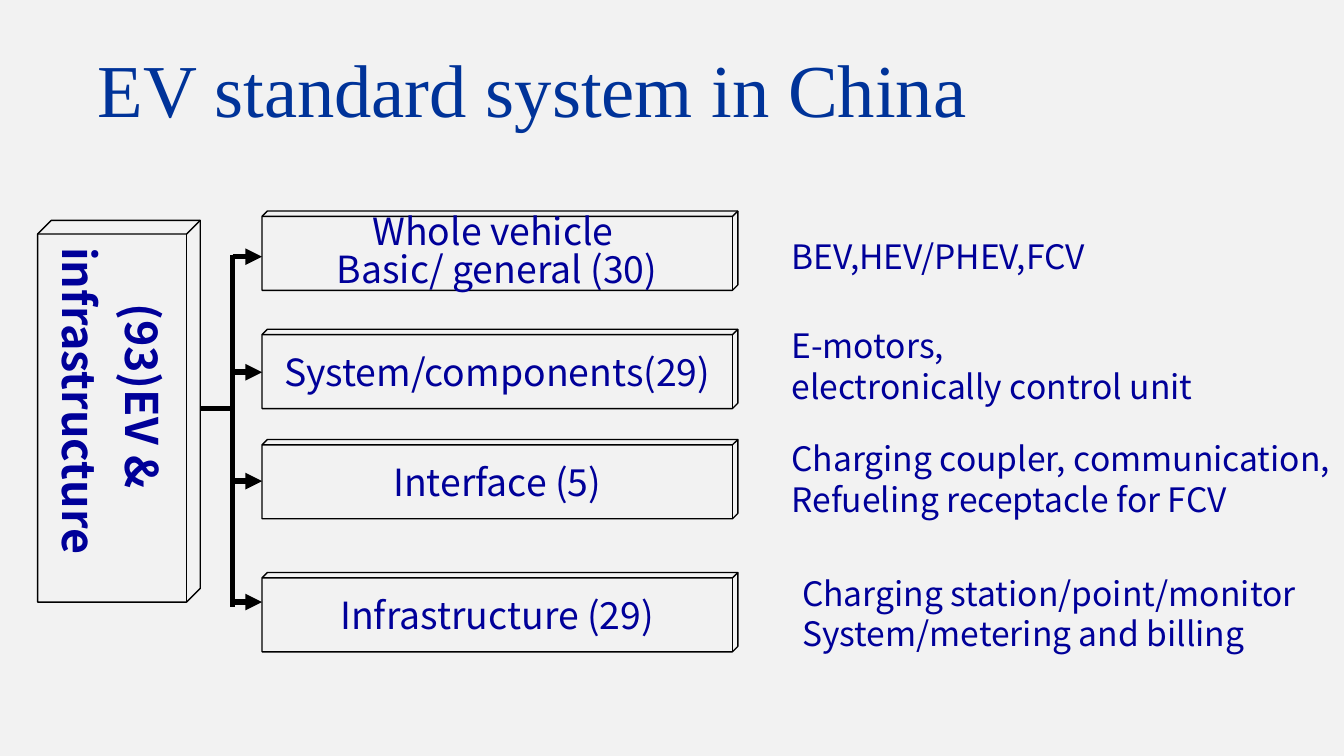
"""Build a slide showing the EV standard system in China as a tree of cubes."""
import pptx
import pptx.dml.color
import pptx.enum.shapes
import pptx.enum.text
import pptx.oxml
import pptx.util
from pptx.util import Inches

ALIGN = pptx.enum.text.PP_ALIGN
NAVY = "000099"
SANS = "Noto Sans CJK SC"


def color(value):
    return pptx.dml.color.RGBColor.from_string(value)


def write(box, lines, size, font=SANS, ink=NAVY, align=ALIGN.LEFT, bold=False, leading=None, gap=0):
    for index, line in enumerate(lines):
        frame = box.text_frame
        para = frame.add_paragraph() if index else frame.paragraphs[0]
        para.alignment = align
        if leading:
            para.line_spacing = pptx.util.Pt(leading)
        if index and gap:
            para.space_before = pptx.util.Pt(gap)
        span = para.add_run()
        span.text = line
        span.font.size = pptx.util.Pt(size)
        span.font.name = font
        span.font.bold = bold
        span.font.color.rgb = color(ink)


deck = pptx.Presentation()
deck.slide_width, deck.slide_height = Inches(10), Inches(10 * 9 / 16)
page = deck.slides.add_slide(deck.slide_layouts[6])
page.background.fill.solid()
page.background.fill.fore_color.rgb = color("F2F2F2")

root = ["(93)EV & ", "infrastructure"]
cubes = [(0.28, 1.64, 1.21, 2.84, 0.084, True, root,
          dict(size=24, align=ALIGN.CENTER, bold=True, gap=5))]

branches = [
    (1.57, ["Whole vehicle ", "Basic/ general (30)"], 20),
    (2.45, ["System/components(29)"], None),
    (3.27, ["Interface (5)"], None),
    (4.26, ["Infrastructure (29)"], None),
]
for top, lines, leading in branches:
    cubes.append((1.95, top, 3.54, 0.59, 0.068, True, lines,
                  dict(size=20, align=ALIGN.CENTER, leading=leading)))

details = [
    (5.79, 1.49, 0.78, ["BEV,HEV/PHEV,FCV"]),
    (5.79, 2.31, 0.77, ["E-motors,", "electronically control unit"]),
    (5.79, 3.15, 0.77, ["Charging coupler, communication,", "Refueling receptacle for FCV"]),
    (5.87, 4.15, 0.77, ["Charging station/point/monitor", "System/metering and billing"]),
]
for left, top, height, lines in details:
    cubes.append((left, top, 1.89, height, 0.068, False, lines, dict(size=18)))

for left, top, width, height, depth, outlined, lines, style in cubes:
    cube = page.shapes.add_shape(
        pptx.enum.shapes.MSO_SHAPE.CUBE, Inches(left), Inches(top), Inches(width), Inches(height))
    cube.adjustments[0] = depth
    cube.shadow.inherit = False
    cube.fill.background()
    if outlined:
        cube.line.color.rgb = color("000000")
        cube.line.width = pptx.util.Pt(0.75)
    else:
        cube.line.fill.background()
    cube.text_frame.word_wrap = False
    cube.text_frame.vertical_anchor = pptx.enum.text.MSO_ANCHOR.MIDDLE
    if lines is root:
        cube.text_frame._txBody.bodyPr.set("vert", "eaVert")
    write(cube, lines, **style)

trunk = 1.73
links = [(1.49, 3.04, trunk, 3.04, False), (trunk, 1.9, trunk, 3.35, False),
         (trunk, 3.35, trunk, 4.52, False)]
links += [(trunk, level, 1.95, level, True) for level in (1.91, 2.77, 3.58, 4.48)]
for x1, y1, x2, y2, arrow in links:
    link = page.shapes.add_connector(
        pptx.enum.shapes.MSO_CONNECTOR.STRAIGHT, Inches(x1), Inches(y1), Inches(x2), Inches(y2))
    link.line.color.rgb = color("000000")
    link.line.width = pptx.util.Pt(3)
    if arrow:
        tail = pptx.oxml.xmlchemy.OxmlElement("a:tailEnd")
        tail.set("type", "triangle")
        link.line._get_or_add_ln().append(tail)
    link._element.spPr.append(pptx.oxml.xmlchemy.OxmlElement("a:effectLst"))

title = page.shapes.add_textbox(Inches(0.63), Inches(0.27), Inches(8.75), Inches(0.65))
title.text_frame.word_wrap = True
write(title, ["EV standard system in China"], 40, "Times New Roman", "003399")

deck.save("out.pptx")
